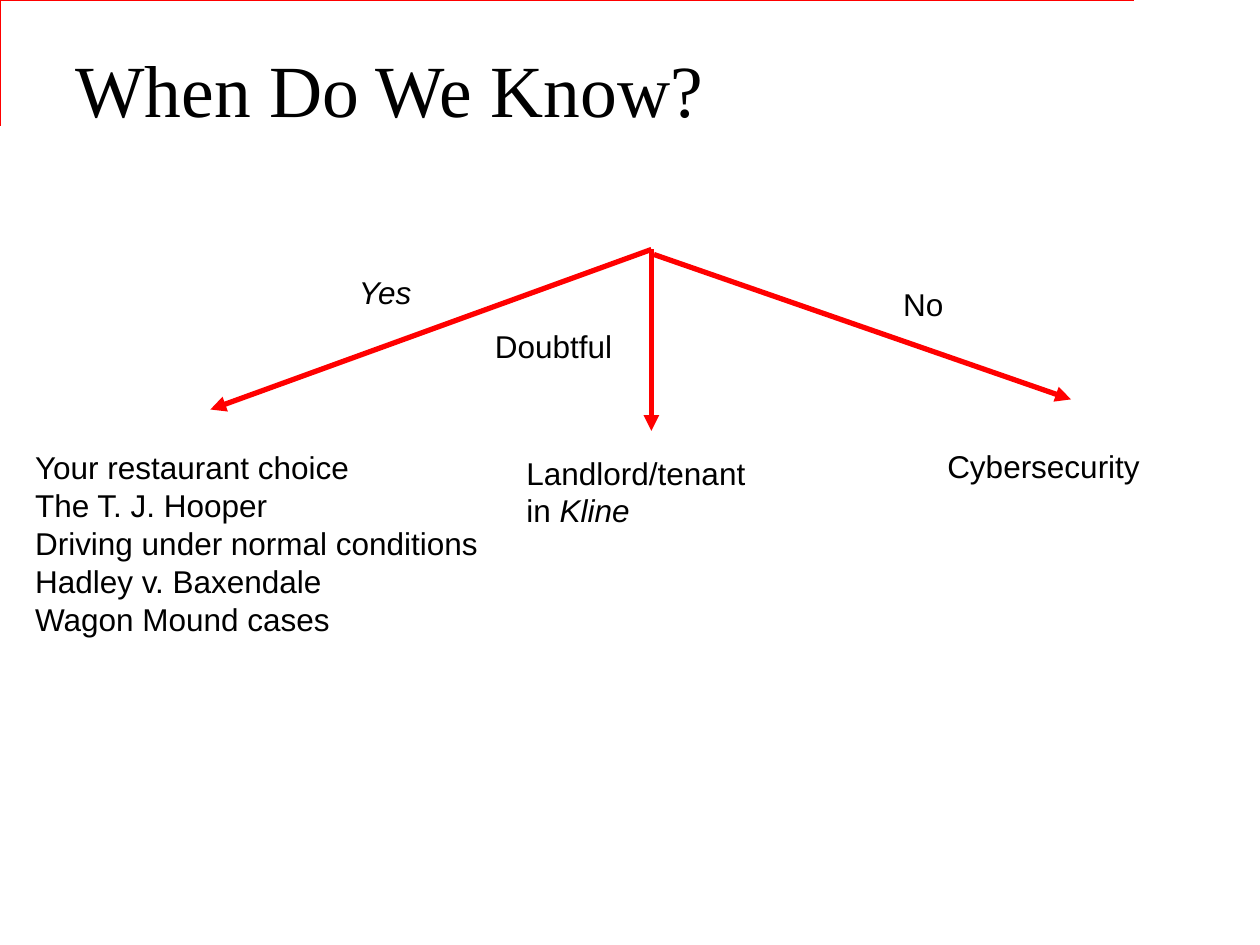
from pptx import Presentation
from pptx.dml.color import RGBColor
from pptx.enum.shapes import MSO_CONNECTOR as Connector
from pptx.enum.text import MSO_ANCHOR as Anchor
from pptx.oxml.ns import qn
from pptx.util import Inches, Pt
from lxml import etree

COLORS = {"text": "000000", "accent": "FF0000", "background": "FFFFFF"}


class SlideBuilder:
    """Holds the style and the slide being built."""

    title_font, title_size = "Times New Roman", 42
    body_font, body_size = "Arial", 18

    def __init__(self, presentation):
        self.slide = presentation.slides.add_slide(presentation.slide_layouts[6])
        fill = self.slide.background.fill
        fill.solid()
        fill.fore_color.rgb = self.color("background")

    def color(self, name):
        return RGBColor.from_string(COLORS[name])

    def style_line(self, line, width):
        line.color.rgb = self.color("accent")
        line.width = Pt(width)

    def frame(self, points):
        """Draw an open, unfilled outline through the points."""
        start, *others = points
        builder = self.slide.shapes.build_freeform(*start, scale=Inches(1))
        builder.add_line_segments(others, close=False)
        shape = builder.convert_to_shape()
        shape.shadow.inherit = False
        shape.fill.background()
        self.style_line(shape.line, 1.5)

    def arrow(self, start, end):
        ends = [Inches(value) for value in (*start, *end)]
        connector = self.slide.shapes.add_connector(Connector.STRAIGHT, *ends)
        self.style_line(connector.line, 3)
        properties = connector._element.spPr
        etree.SubElement(properties.find(qn("a:ln")), qn("a:tailEnd"), type="triangle")
        etree.SubElement(properties, qn("a:effectLst"))

    def text(self, box, paragraphs, font=body_font, size=body_size):
        """Each paragraph is a list of (text, italic) runs."""
        shape = self.slide.shapes.add_textbox(*[Inches(value) for value in box])
        text_frame = shape.text_frame
        text_frame.word_wrap = True
        text_frame.vertical_anchor = Anchor.TOP
        for index, runs in enumerate(paragraphs):
            paragraph = text_frame.add_paragraph() if index else text_frame.paragraphs[0]
            for content, italic in runs:
                run = paragraph.add_run()
                run.text = content
                run.font.name = font
                run.font.size = Pt(size)
                run.font.italic = italic
                run.font.color.rgb = self.color("text")

    def title(self, box, content):
        self.text(box, [[(content, False)]], self.title_font, self.title_size)


def main():
    presentation = Presentation()
    presentation.slide_width = Inches(10)
    presentation.slide_height = Inches(7.5)
    builder = SlideBuilder(presentation)

    builder.frame([(0.42, 0.92), (0.42, 0.25), (9.42, 0.25)])
    builder.title((0.5, 0.3, 9, 1.25), "When Do We Know?")

    arrows = [
        ((5.17, 1.98), (1.67, 3.25)),
        ((5.17, 1.98), (5.17, 3.42)),
        ((5.19, 2.02), (8.5, 3.17)),
    ]
    for start, end in arrows:
        builder.arrow(start, end)

    yes_examples = [
        "Your restaurant choice",
        "The T. J. Hooper",
        "Driving under normal conditions",
        "Hadley v. Baxendale",
        "Wagon Mound cases",
    ]
    builder.text((0.18, 3.51, 3.92, 1.62), [[(line, False)] for line in yes_examples])
    builder.text((4.08, 3.55, 2.17, 0.71),
                 [[("Landlord/tenant in ", False), ("Kline", True)]])
    builder.text((7.42, 3.5, 2.17, 0.4), [[("Cybersecurity", False)]])

    answers = [
        ((2.75, 2.12, 0.75, 0.4), "Yes", True),
        ((3.83, 2.55, 1.37, 0.4), "Doubtful", False),
        ((7.07, 2.21, 0.83, 0.4), "No", False),
    ]
    for box, answer, italic in answers:
        builder.text(box, [[(answer, italic)]])

    presentation.save("out.pptx")


if __name__ == "__main__":
    main()
